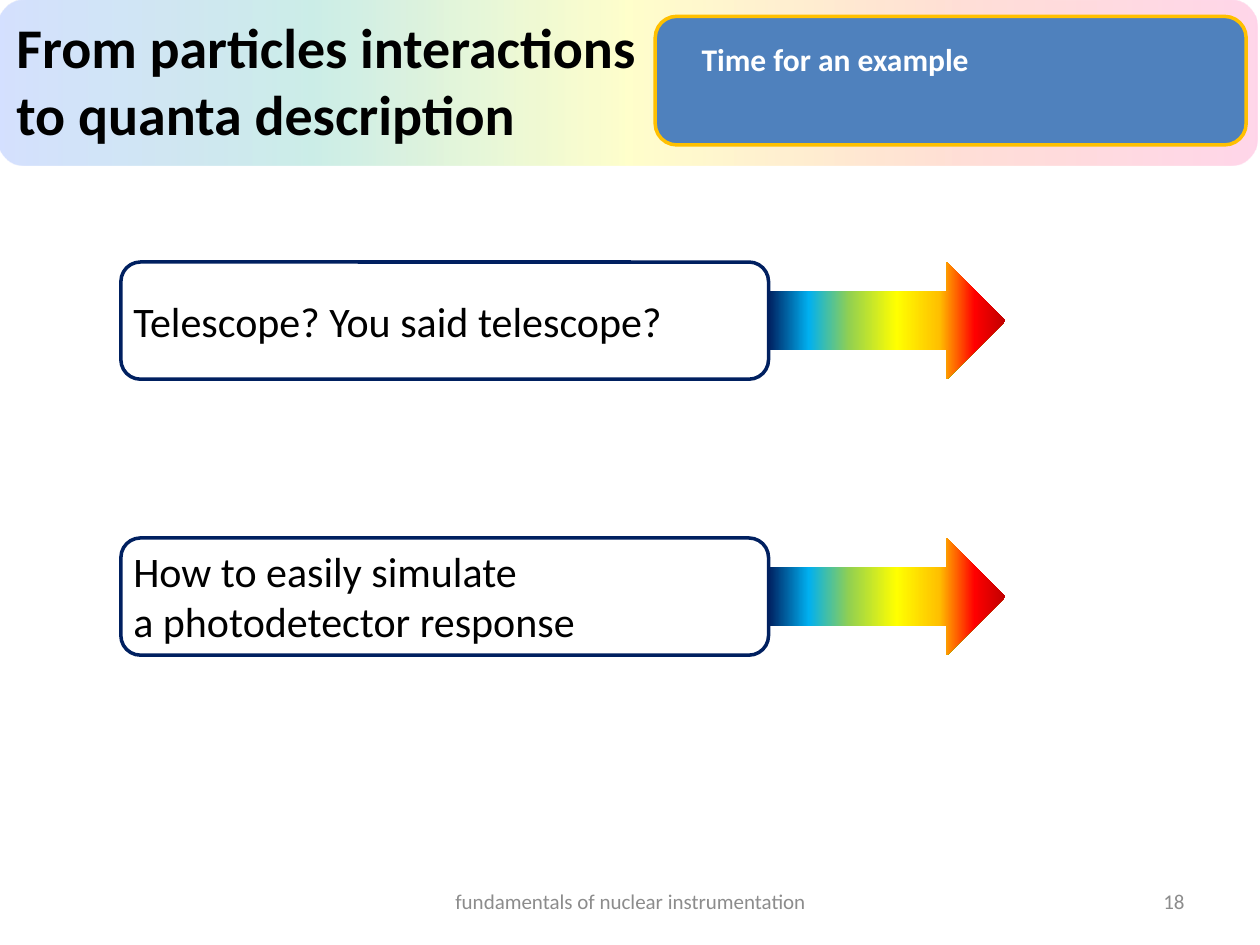
"""Build the slide that introduces two worked examples on particle detection."""
from pptx import Presentation
from pptx import oxml
from pptx import util as u
from pptx.dml.color import RGBColor
from pptx.enum import shapes, text
from pptx.oxml.ns import nsdecls

TITLE = ["From particles interactions", "to quanta description"]
CALLOUT = ["Time for an example"]
FOOTER = ["fundamentals of nuclear instrumentation"]
NUMBER = ["18"]
EXAMPLES = [
    (2.08, 4.44, 0.5, ["Telescope? You said telescope?"]),
    (4.27, 3.74, 0.91, ["How to easily simulate", "a photodetector response"]),
]
BLACK = RGBColor(0x00, 0x00, 0x00)
WHITE = RGBColor(0xFF, 0xFF, 0xFF)
GREY = RGBColor(0x8C, 0x8C, 0x8C)
BLUE = RGBColor(0x4F, 0x81, 0xBD)
NAVY = RGBColor(0x00, 0x20, 0x60)
GOLD = RGBColor(0xFF, 0xC0, 0x00)
PASTEL = [
    (0, RGBColor(0xFF, 0x33, 0x99)),
    (25, RGBColor(0xFF, 0x66, 0x33)),
    (50, RGBColor(0xFF, 0xFF, 0x00)),
    (75, RGBColor(0x01, 0xA7, 0x8F)),
    (100, RGBColor(0x33, 0x66, 0xFF)),
]
RAINBOW = [
    (0, NAVY),
    (17, RGBColor(0x00, 0xB0, 0xF0)),
    (34, RGBColor(0x92, 0xD0, 0x50)),
    (54, RGBColor(0xFF, 0xFF, 0x00)),
    (72, GOLD),
    (87, RGBColor(0xFF, 0x00, 0x00)),
    (100, RGBColor(0xC0, 0x00, 0x00)),
]
BOX_LEFT, BOX_WIDTH, BOX_HEIGHT, ARROW_WIDTH = 0.96, 5.14, 0.93, 1.88
ROUND = shapes.MSO_SHAPE.ROUNDED_RECTANGLE
ARROW = shapes.MSO_SHAPE.RIGHT_ARROW
TOP, MIDDLE = text.MSO_ANCHOR.TOP, text.MSO_ANCHOR.MIDDLE
LEFT, CENTER, RIGHT = text.PP_ALIGN.LEFT, text.PP_ALIGN.CENTER, text.PP_ALIGN.RIGHT


def add_shape(s, kind, box, fill=None, line=None):
    sp = s.shapes.add_shape(kind, *map(u.Inches, box))
    sp.shadow.inherit = False
    if fill is None:
        sp.fill.background()
    else:
        sp.fill.solid()
        sp.fill.fore_color.rgb = fill
    if line is None:
        sp.line.fill.background()
    else:
        sp.line.color.rgb = line
        sp.line.width = u.Pt(2)
    return sp


def set_gradient(sp, stops, angle, alpha=100):
    gs = "".join(
        f'<a:gs pos="{pos * 1000}"><a:srgbClr val="{color}">'
        f'<a:alpha val="{alpha * 1000}"/></a:srgbClr></a:gs>'
        for pos, color in stops
    )
    grad = oxml.parse_xml(
        f'<a:gradFill {nsdecls("a")} rotWithShape="1"><a:gsLst>{gs}</a:gsLst>'
        f'<a:lin ang="{angle * 60000}" scaled="0"/></a:gradFill>'
    )
    spPr = sp.element.spPr
    spPr.replace(spPr.find("{*}noFill"), grad)


def write(sp, box, lines, size, color, bold=False, align=LEFT, anchor=TOP, wrap=False):
    sp.left, sp.top, sp.width, sp.height = map(u.Inches, box)
    tf = sp.text_frame
    tf.text = "\n".join(lines)
    tf.word_wrap = wrap
    tf.auto_size = text.MSO_AUTO_SIZE.NONE if wrap else text.MSO_AUTO_SIZE.SHAPE_TO_FIT_TEXT
    tf.vertical_anchor = anchor
    for p in tf.paragraphs:
        p.alignment = align
        p.font.name = "Calibri"
        p.font.size = u.Pt(size)
        p.font.bold = bold
        p.font.color.rgb = color


def add_text(s, box, *args, **kwargs):
    write(s.shapes.add_textbox(*map(u.Inches, box)), box, *args, **kwargs)


def main():
    prs = Presentation()
    prs.slide_width, prs.slide_height = u.Inches(10), u.Inches(7.5)
    s = prs.slides.add_slide(prs.slide_layouts.get_by_name("Title Only"))

    banner = add_shape(s, ROUND, (-0.02, 0, 10, 1.31))
    set_gradient(banner, PASTEL, 180, alpha=20)
    title = s.shapes.title
    title.element.addprevious(banner.element)
    write(title, (0.03, 0.05, 5.17, 1.18), TITLE, 32, BLACK, bold=True)

    add_text(s, (3.42, 6.95, 3.17, 0.4), FOOTER, 12, GREY, align=CENTER, anchor=MIDDLE, wrap=True)
    add_text(s, (7.17, 6.95, 2.33, 0.4), NUMBER, 12, GREY, align=RIGHT, anchor=MIDDLE, wrap=True)

    add_shape(s, ROUND, (5.2, 0.13, 4.69, 1.02), BLUE, GOLD)
    add_text(s, (5.47, 0.27, 2.34, 0.4), CALLOUT, 18, WHITE, bold=True)

    for top, width, height, lines in EXAMPLES:
        add_shape(s, ROUND, (BOX_LEFT, top, BOX_WIDTH, BOX_HEIGHT), WHITE, NAVY)
        arrow = add_shape(s, ARROW, (BOX_LEFT + BOX_WIDTH, top, ARROW_WIDTH, BOX_HEIGHT))
        set_gradient(arrow, RAINBOW, 0)
        text_top = top + (BOX_HEIGHT - height) / 2
        add_text(s, (BOX_LEFT, text_top, width, height), lines, 24, BLACK)

    prs.save("out.pptx")


if __name__ == "__main__":
    main()
